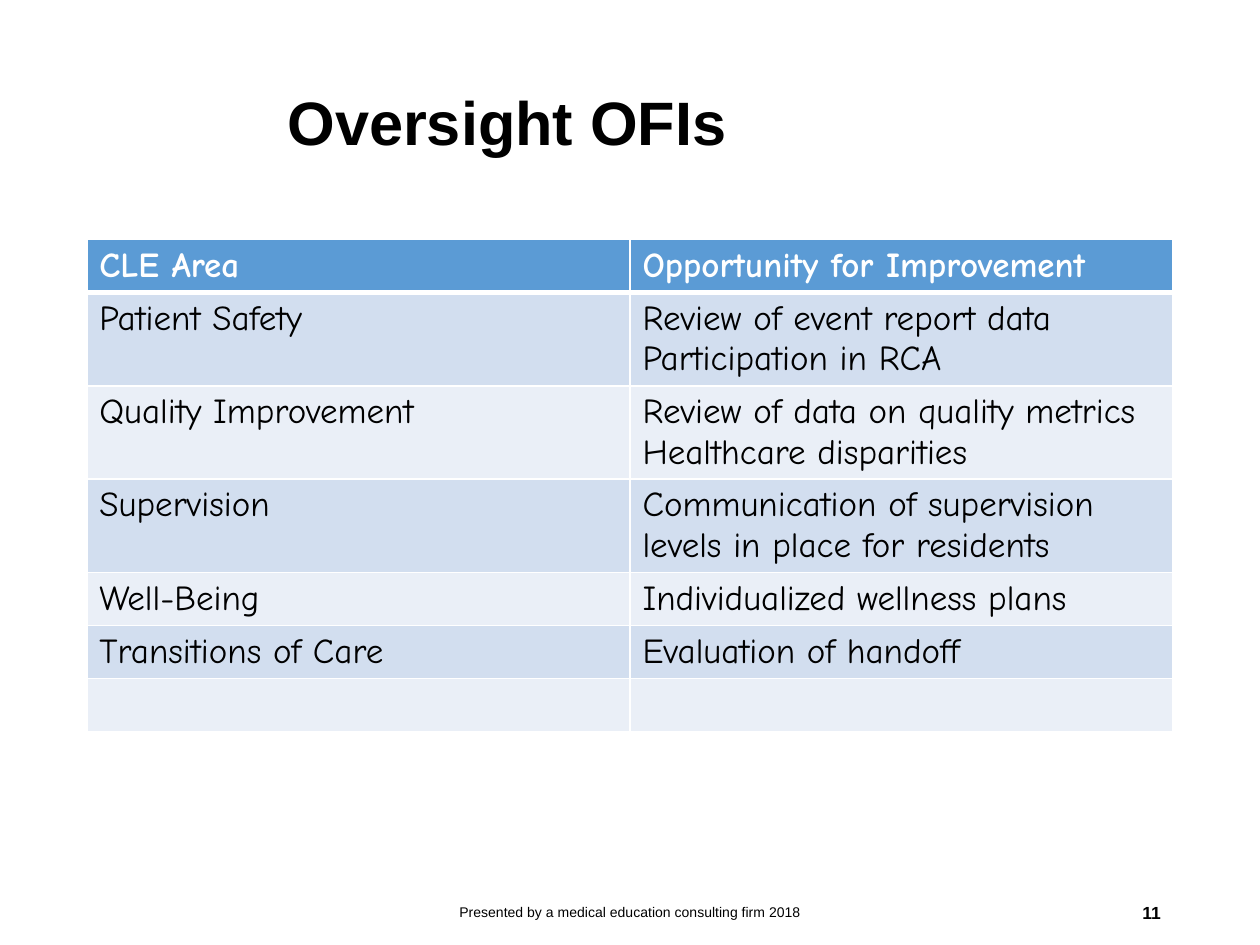
"""Build the oversight opportunities slide."""
from typing import NamedTuple

from lxml import etree
from pptx import Presentation
from pptx.dml.color import RGBColor
from pptx.enum import text as t
from pptx.oxml import ns
from pptx.util import Cm, Pt

BLACK = RGBColor(0x00, 0x00, 0x00)
WHITE = RGBColor(0xFF, 0xFF, 0xFF)
BLUE = RGBColor(0x5B, 0x9B, 0xD5)
BANDS = (RGBColor(0xD2, 0xDE, 0xEF), RGBColor(0xEA, 0xEF, 0xF7))
LEFT, CENTER, RIGHT = t.PP_ALIGN.LEFT, t.PP_ALIGN.CENTER, t.PP_ALIGN.RIGHT


class Row(NamedTuple):
    area: str
    goal: str


class Note(NamedTuple):
    text: str
    left: float
    width: float
    size: float
    align: t.PP_ALIGN
    bold: bool


ROWS = (
    Row("CLE Area", "Opportunity for Improvement"),
    Row("Patient Safety", "Review of event report data\nParticipation in RCA"),
    Row("Quality Improvement",
        "Review of data on quality metrics\nHealthcare disparities"),
    Row("Supervision",
        "Communication of supervision levels in place for residents"),
    Row("Well-Being", "Individualized wellness plans"),
    Row("Transitions of Care", "Evaluation of handoff"),
    Row("", ""),
)
NOTES = (
    Note("Presented by a medical education consulting firm 2018",
         8.41, 8.59, 8, CENTER, False),
    Note("11", 17.93, 5.72, 10, RIGHT, True),
)


def write(frame, words: str, *, size: float, font: str = "Arial",
          color: RGBColor = BLACK, bold: bool = False,
          align: t.PP_ALIGN = LEFT, space: float = 1.0) -> None:
    """Fill a text frame with evenly formatted paragraphs."""
    frame.text = words
    for para in frame.paragraphs:
        para.alignment = align
        para.line_spacing = space
        para.font.name = font
        para.font.size = Pt(size)
        para.font.bold = bold
        para.font.color.rgb = color


def edge(cell, top: float, base: float) -> None:
    """Draw white borders around a cell, with widths in points."""
    props = cell._tc.get_or_add_tcPr()
    sides = (("lnL", 1), ("lnR", 1), ("lnT", top), ("lnB", base))
    for spot, (tag, width) in enumerate(sides):
        line = etree.Element(ns.qn(f"a:{tag}"), w=str(Pt(width)))
        fill = etree.SubElement(line, ns.qn("a:solidFill"))
        etree.SubElement(fill, ns.qn("a:srgbClr"), val=str(WHITE))
        props.insert(spot, line)


def draw_title(slide) -> None:
    """Place and format the slide title."""
    title = slide.shapes.title
    title.left, title.top = Cm(5.54), Cm(0.69)
    title.width, title.height = Cm(18.14), Cm(3.68)
    frame = title.text_frame
    frame.auto_size = t.MSO_AUTO_SIZE.NONE
    frame.vertical_anchor = t.MSO_ANCHOR.MIDDLE
    write(frame, "Oversight OFIs", size=35, bold=True, space=0.9)


def draw_table(slide, rows: tuple[Row, ...]) -> None:
    """Draw the banded table under its header row."""
    high = 1.04
    table = slide.shapes.add_table(
        len(rows), 2, Cm(1.75), Cm(4.83), Cm(21.9), Cm(high * len(rows))).table
    for i, row in enumerate(rows):
        table.rows[i].height = Cm(high)
        head = i == 0
        for cell, words in zip(table.rows[i].cells, row):
            cell.fill.solid()
            cell.fill.fore_color.rgb = BLUE if head else BANDS[(i - 1) % 2]
            edge(cell, 3 if i == 1 else 1, 3 if head else 1)
            write(cell.text_frame, words, size=20, font="Comic Neue",
                  color=WHITE if head else BLACK, bold=head)


def draw_note(slide, note: Note) -> None:
    """Add one text box at the foot of the slide."""
    box = slide.shapes.add_textbox(
        Cm(note.left), Cm(17.88), Cm(note.width), Cm(1.02))
    frame = box.text_frame
    frame.word_wrap = True
    frame.vertical_anchor = t.MSO_ANCHOR.MIDDLE
    write(frame, note.text, size=note.size, bold=note.bold, align=note.align)


def main() -> None:
    """Build and save the deck."""
    deck = Presentation()
    deck.slide_width, deck.slide_height = Cm(25.4), Cm(19.05)
    slide = deck.slides.add_slide(deck.slide_layouts[5])
    draw_table(slide, ROWS)
    draw_title(slide)
    for note in NOTES:
        draw_note(slide, note)
    deck.save("out.pptx")


if __name__ == "__main__":
    main()
